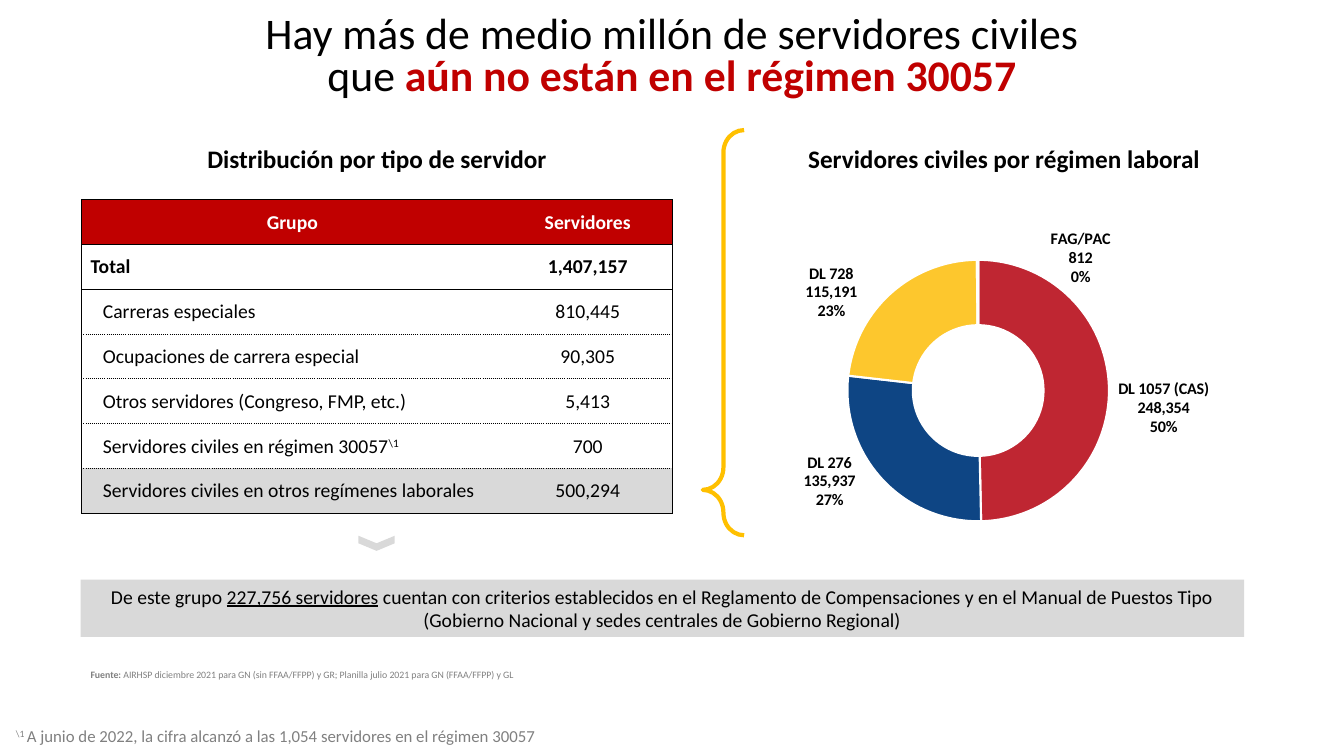
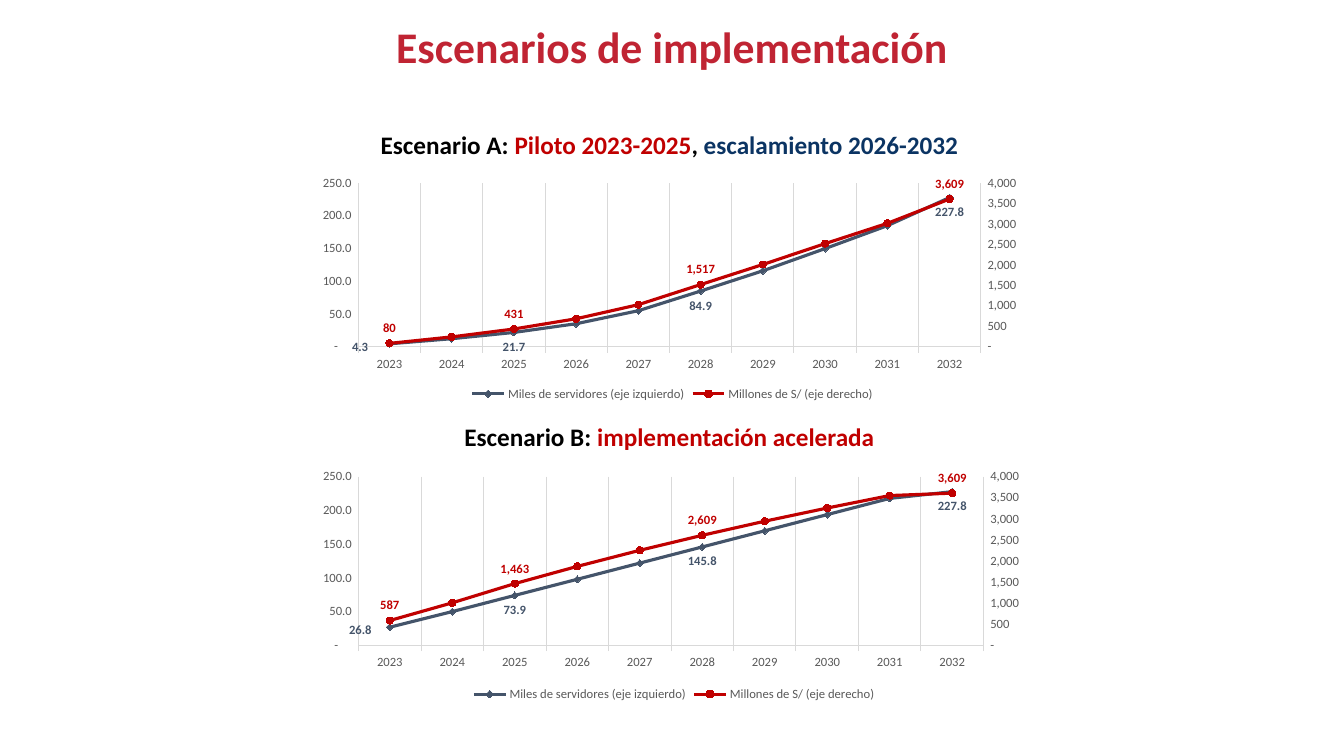
from copy import deepcopy

from pptx import Presentation
from pptx.chart.data import CategoryChartData
from pptx.dml.color import RGBColor
from pptx.enum.chart import (XL_CHART_TYPE, XL_LABEL_POSITION, XL_LEGEND_POSITION,
                             XL_MARKER_STYLE, XL_TICK_MARK)
from pptx.enum.shapes import MSO_SHAPE
from pptx.enum.text import MSO_ANCHOR, PP_ALIGN
from pptx.oxml import parse_xml
from pptx.oxml.ns import nsdecls, qn
from pptx.util import Pt

EMU_PER_PX = 9144  # 100 px to the inch
FONT = "Calibri"
BLACK, WHITE, RED, CRIMSON = "000000", "FFFFFF", "C00000", "C02433"
NAVY, SLATE, AMBER = "0B3463", "44546A", "FFC000"
LIGHT_GREY, MID_GREY, DARK_GREY = "D9D9D9", "808080", "595959"
AXIS_FORMAT = '_-* {0}_-;\\-* {0}_-;_-* "-"??_-;'
AXIS_TEXT = {"size": 9, "color": DARK_GREY}
HEADING = {"size": 18, "bold": True}
LABELLED_YEARS = (0, 2, 5, 9)


def px(value):
    return int(value * EMU_PER_PX)


def box(*lengths):
    return [px(length) for length in lengths]


def rgb(color):
    return RGBColor.from_string(color)


def set_font(font, **formats):
    values = {"name": FONT, "size": 12, "color": BLACK, **formats}
    font.color.rgb = rgb(values.pop("color"))
    values["size"] = Pt(values["size"])
    for name, value in values.items():
        setattr(font, name, value)


def write(frame, paragraphs, align=PP_ALIGN.LEFT, anchor=MSO_ANCHOR.TOP,
          line_spacing=None, **formats):
    """Each paragraph is a list of (text, format changes) runs."""
    frame.word_wrap = True
    frame.vertical_anchor = anchor
    for index, runs in enumerate(paragraphs):
        paragraph = frame.add_paragraph() if index else frame.paragraphs[0]
        paragraph.alignment = align
        if line_spacing:
            paragraph.line_spacing = line_spacing
        for text, changes in runs:
            changes = dict(changes)
            raised = changes.pop("raised", False)
            run = paragraph.add_run()
            run.text = text
            set_font(run.font, **{**formats, **changes})
            if raised:
                run.font._element.set("baseline", "30000")


def add_text(slide, position, runs, **formats):
    shape = slide.shapes.add_textbox(*box(*position))
    write(shape.text_frame, [runs], **formats)


def add_heading(slide, position, runs):
    add_text(slide, position, runs, align=PP_ALIGN.CENTER, **HEADING)


def add_titled_slide(presentation, top, height, runs, line_spacing):
    slide = presentation.slides.add_slide(presentation.slide_layouts[5])
    title = slide.shapes.title
    title.left, title.top, title.width, title.height = box(225, top, 883, height)
    write(title.text_frame, [runs], align=PP_ALIGN.CENTER, anchor=MSO_ANCHOR.MIDDLE,
          line_spacing=line_spacing, size=31.2)
    return slide


def add_shape(slide, kind, position, fill=None, line=None):
    shape = slide.shapes.add_shape(kind, *box(*position))
    shape.shadow.inherit = False
    if fill:
        shape.fill.solid()
        shape.fill.fore_color.rgb = rgb(fill)
    else:
        shape.fill.background()
    if line:
        shape.line.color.rgb = rgb(line)
        shape.line.width = Pt(3)
    else:
        shape.line.fill.background()
    return shape


# Table
def set_borders(cell, **dashes):
    properties = cell._tc.get_or_add_tcPr()
    for index, side in enumerate("LRTB"):
        dash = dashes.get(side)
        content = (f'<a:solidFill><a:srgbClr val="{BLACK}"/></a:solidFill>'
                   f'<a:prstDash val="{dash}"/>') if dash else "<a:noFill/>"
        properties.insert(index, parse_xml(
            f'<a:ln{side} {nsdecls("a")} w="6350">{content}</a:ln{side}>'))


def add_group_table(slide, position, column_widths, rows):
    table = slide.shapes.add_table(len(rows), len(column_widths), *box(*position)).table
    table.horz_banding = False
    for column, width in zip(table.columns, column_widths):
        column.width = px(width)
    last = len(rows) - 1
    # Solid rules around the header, the total and the table; dotted ones between groups
    rules = ["solid" if edge in (0, 1, 2, last + 1) else "sysDot" for edge in range(last + 2)]
    fills = {0: RED, last: LIGHT_GREY}
    for row_index, (group, count) in enumerate(rows):
        for column_index, runs in enumerate((group, [(count, {})])):
            cell = table.cell(row_index, column_index)
            centred = row_index == 0 or column_index == 1
            indent = 1 if centred else 9 if row_index == 1 else 21
            cell.margin_left, cell.margin_top, cell.margin_right, cell.margin_bottom = box(
                indent, 1, 1, 0)
            cell.vertical_anchor = MSO_ANCHOR.MIDDLE
            cell.fill.solid()
            cell.fill.fore_color.rgb = rgb(fills.get(row_index, WHITE))
            write(cell.text_frame, [runs], anchor=MSO_ANCHOR.MIDDLE,
                  align=PP_ALIGN.CENTER if centred else PP_ALIGN.LEFT, size=14,
                  bold=row_index < 2, color=BLACK if row_index else WHITE)
            set_borders(cell, T=rules[row_index], B=rules[row_index + 1],
                        **{"R" if column_index else "L": "solid"})


# Charts
def layout_xml(x, y, width=None, height=None):
    parts = ""
    if width:
        parts = ('<c:layoutTarget val="inner"/><c:xMode val="edge"/><c:yMode val="edge"/>')
    parts += f'<c:x val="{x}"/><c:y val="{y}"/>'
    if width:
        parts += f'<c:w val="{width}"/><c:h val="{height}"/>'
    return parse_xml(f'<c:layout {nsdecls("c")}><c:manualLayout>{parts}'
                     '</c:manualLayout></c:layout>')


def add_chart(slide, kind, position, categories, series, plot_layout):
    data = CategoryChartData()
    data.categories = categories
    for name, values, number_format in series:
        data.add_series(name, values, number_format)
    chart = slide.shapes.add_chart(kind, *box(*position), data).chart
    chart.has_title = False
    chart.has_legend = False
    set_font(chart.font, size=10)
    plot_area = chart._chartSpace.chart.plotArea
    for old_layout in plot_area.findall(qn("c:layout")):
        plot_area.remove(old_layout)
    plot_area.insert(0, layout_xml(*plot_layout))
    return chart


def add_label(point, shift=None, **formats):
    label = point.data_label
    set_font(label.font, bold=True, **formats)
    element = label._get_or_add_dLbl()
    if shift:
        element.find(qn("c:idx")).addnext(layout_xml(*shift))
    return label, element


def hide_other_labels(series):
    labels = series.data_labels
    labels.show_value = False
    for leader in labels._element.findall(qn("c:showLeaderLines")):
        leader.set("val", "0")


def add_regime_doughnut(slide, position, slices):
    """Each slice is (category, value, colour, label shift)."""
    categories, values, colors, shifts = zip(*slices)
    chart = add_chart(slide, XL_CHART_TYPE.DOUGHNUT, position, categories,
                      [("Servidores", values, "#,##0")], (0.26, 0.12, 0.47, 0.82))
    series = chart.plots[0].series[0]
    for index, (color, shift) in enumerate(zip(colors, shifts)):
        point = series.points[index]
        point.format.fill.solid()
        point.format.fill.fore_color.rgb = rgb(color)
        point.format.line.color.rgb = rgb(WHITE)
        point.format.line.width = Pt(1.5)
        _, element = add_label(point, shift, size=11.5)
        for flag in ("c:showCatName", "c:showPercent"):
            element.find(qn(flag)).set("val", "1")
        element.append(parse_xml(f'<c:separator {nsdecls("c")}>\n</c:separator>'))
    hide_other_labels(series)


def move_to_right_axis(chart, maximum, unit, number_format):
    """Give the second series its own plot and a value axis on the right."""
    plot_area = chart._chartSpace.chart.plotArea
    left_plot = plot_area.find(qn("c:lineChart"))
    right_plot = deepcopy(left_plot)
    left_plot.remove(left_plot.findall(qn("c:ser"))[1])
    right_plot.remove(right_plot.findall(qn("c:ser"))[0])
    left_plot.addnext(right_plot)
    category, value = (deepcopy(plot_area.find(qn(tag))) for tag in ("c:catAx", "c:valAx"))
    plot_area.find(qn("c:valAx")).addnext(value)
    value.addnext(category)
    for axis, own, other in ((category, "5001", "5002"), (value, "5002", "5001")):
        axis.find(qn("c:axId")).set("val", own)
        axis.find(qn("c:crossAx")).set("val", other)
    for axis_id, number in zip(right_plot.findall(qn("c:axId")), ("5001", "5002")):
        axis_id.set("val", number)
    category.remove(category.find(qn("c:majorGridlines")))
    category.find(qn("c:delete")).set("val", "1")
    for tag, name, setting in (("c:scaling/c:max", "val", maximum),
                               ("c:majorUnit", "val", unit),
                               ("c:numFmt", "formatCode", number_format),
                               ("c:axPos", "val", "r"), ("c:crosses", "val", "max")):
        value.find("/".join(qn(step) for step in tag.split("/"))).set(name, str(setting))


def add_scenario_chart(slide, position, servants, millions):
    chart = add_chart(slide, XL_CHART_TYPE.LINE_MARKERS, position,
                      [str(year) for year in range(2023, 2033)],
                      [("Miles de servidores (eje izquierdo)", servants, "#,##0.0"),
                       ("Millones de S/ (eje derecho)", millions, "#,##0")],
                      (0.072, 0.05, 0.848, 0.7))
    chart.has_legend = True
    chart.legend.position = XL_LEGEND_POSITION.BOTTOM
    chart.legend.include_in_layout = False
    set_font(chart.legend.font, **AXIS_TEXT)

    # Axes
    years, values = chart.category_axis, chart.value_axis
    years.has_major_gridlines = True
    for line in (years.format.line, years.major_gridlines.format.line):
        line.color.rgb = rgb(LIGHT_GREY)
        line.width = Pt(0.75)
    years.major_tick_mark = XL_TICK_MARK.OUTSIDE
    values.has_major_gridlines = False
    values.major_tick_mark = XL_TICK_MARK.NONE
    values.format.line.fill.background()
    values.minimum_scale, values.maximum_scale, values.major_unit = 0, 250, 50
    values.tick_labels.number_format = AXIS_FORMAT.format("#,##0.0")
    values.tick_labels.number_format_is_linked = False
    for axis in (years, values):
        set_font(axis.tick_labels.font, **AXIS_TEXT)

    # Lines and the labels of the chosen years
    chart.plots[0].vary_by_categories = False
    styles = ((SLATE, XL_MARKER_STYLE.DIAMOND, XL_LABEL_POSITION.BELOW, (-0.04, -0.047)),
              (RED, XL_MARKER_STYLE.CIRCLE, XL_LABEL_POSITION.ABOVE, None))
    for series, (color, marker, place, first_shift) in zip(chart.plots[0].series, styles):
        series.smooth = False
        series.format.line.color.rgb = rgb(color)
        series.format.line.width = Pt(2.25)
        series.marker.style, series.marker.size = marker, 5
        series.marker.format.fill.solid()
        series.marker.format.fill.fore_color.rgb = rgb(color)
        series.marker.format.line.color.rgb = rgb(color)
        for index in LABELLED_YEARS:
            label, _ = add_label(series.points[index], None if index else first_shift,
                                 size=9, color=color)
            label.position = place
        hide_other_labels(series)
    move_to_right_axis(chart, 4000, 500, AXIS_FORMAT.format("#,##0"))


# Slides
def build_servants_slide(presentation):
    slide = add_titled_slide(presentation, 8, 99, [
        ("Hay más de medio millón de servidores civiles que ", {}),
        ("aún no están en el régimen 30057", {"color": RED, "bold": True})], 0.8)
    add_heading(slide, (174, 137, 400, 40), [("Distribución por tipo de servidor", {})])
    add_heading(slide, (773, 137, 446, 40), [("Servidores civiles por régimen laboral", {})])
    add_group_table(slide, (81, 198, 586, 311), (418, 168), [
        ([("Grupo", {})], "Servidores"),
        ([("Total", {})], "1,407,157"),
        ([("Carreras especiales", {})], "810,445"),
        ([("Ocupaciones de carrera especial", {})], "90,305"),
        ([("Otros servidores (Congreso, FMP, etc.)", {})], "5,413"),
        ([("Servidores civiles en régimen 30057", {}), ("\\1", {"raised": True})], "700"),
        ([("Servidores civiles en otros regímenes laborales", {})], "500,294")])
    add_regime_doughnut(slide, (697, 219, 552, 318), [
        ("DL 1057 (CAS)", 248354, "BF2632", (0.157, 0.06)),
        ("DL 276", 135937, "0E4584", (-0.137, 0.078)),
        ("DL 728", 115191, "FDC72D", (-0.146, -0.078)),
        ("FAG/PAC", 812, "73171E", (0.185, -0.106))])
    brace = add_shape(slide, MSO_SHAPE.LEFT_BRACE, (697, 129, 41, 402), line=AMBER)
    brace.adjustments[0], brace.adjustments[1] = 0.545, 0.888
    chevron = add_shape(slide, MSO_SHAPE.CHEVRON, (366, 521, 15, 36), fill=LIGHT_GREY)
    chevron.rotation = 90
    band = add_shape(slide, MSO_SHAPE.RECTANGLE, (80, 575, 1154, 57), fill=LIGHT_GREY)
    write(band.text_frame, [
        [("De este grupo ", {}), ("227,756 servidores", {"underline": True}),
         (" cuentan con criterios establecidos en el Reglamento de Compensaciones "
          "y en el Manual de Puestos Tipo", {})],
        [("(Gobierno Nacional y sedes centrales de Gobierno Regional)", {})]],
        align=PP_ALIGN.CENTER, anchor=MSO_ANCHOR.MIDDLE, size=14)
    add_text(slide, (80, 654, 977, 30), [
        ("Fuente: ", {"bold": True}),
        ("AIRHSP diciembre 2021 para GN (sin FFAA/FFPP) y GR; "
         "Planilla julio 2021 para GN (FFAA/FFPP) y GL", {})],
        anchor=MSO_ANCHOR.MIDDLE, size=7, color=MID_GREY)
    add_text(slide, (6, 715, 1234, 30), [
        ("\\1 ", {"raised": True}),
        ("A junio de 2022, la cifra alcanzó a las 1,054 servidores en el régimen 30057", {})],
        color=MID_GREY)


def build_scenarios_slide(presentation):
    slide = add_titled_slide(presentation, 16, 66, [
        ("Escenarios de implementación", {"color": CRIMSON, "bold": True})], 0.9)
    add_heading(slide, (314, 123, 700, 40), [
        ("Escenario A: ", {}), ("Piloto 2023-2025", {"color": RED}), (", ", {}),
        ("escalamiento 2026-2032", {"color": NAVY})])
    add_scenario_chart(slide, (303, 170, 728, 232),
                       (4.3, 12.1, 21.7, 35, 54.9, 84.9, 115.9, 149.8, 184.8, 227.8),
                       (80, 238, 431, 681, 1026, 1517, 2008, 2518, 3014, 3609))
    add_heading(slide, (314, 413, 700, 40), [
        ("Escenario B: ", {}), ("implementación acelerada", {"color": RED})])
    add_scenario_chart(slide, (303, 461, 731, 239),
                       (26.8, 49.9, 73.9, 97.9, 121.9, 145.8, 169.8, 193.8, 217.8, 227.8),
                       (587, 1007, 1463, 1872, 2253, 2609, 2943, 3257, 3552, 3609))


def main():
    presentation = Presentation()
    presentation.slide_width, presentation.slide_height = box(1333, 750)
    build_servants_slide(presentation)
    build_scenarios_slide(presentation)
    presentation.save("out.pptx")


if __name__ == "__main__":
    main()
